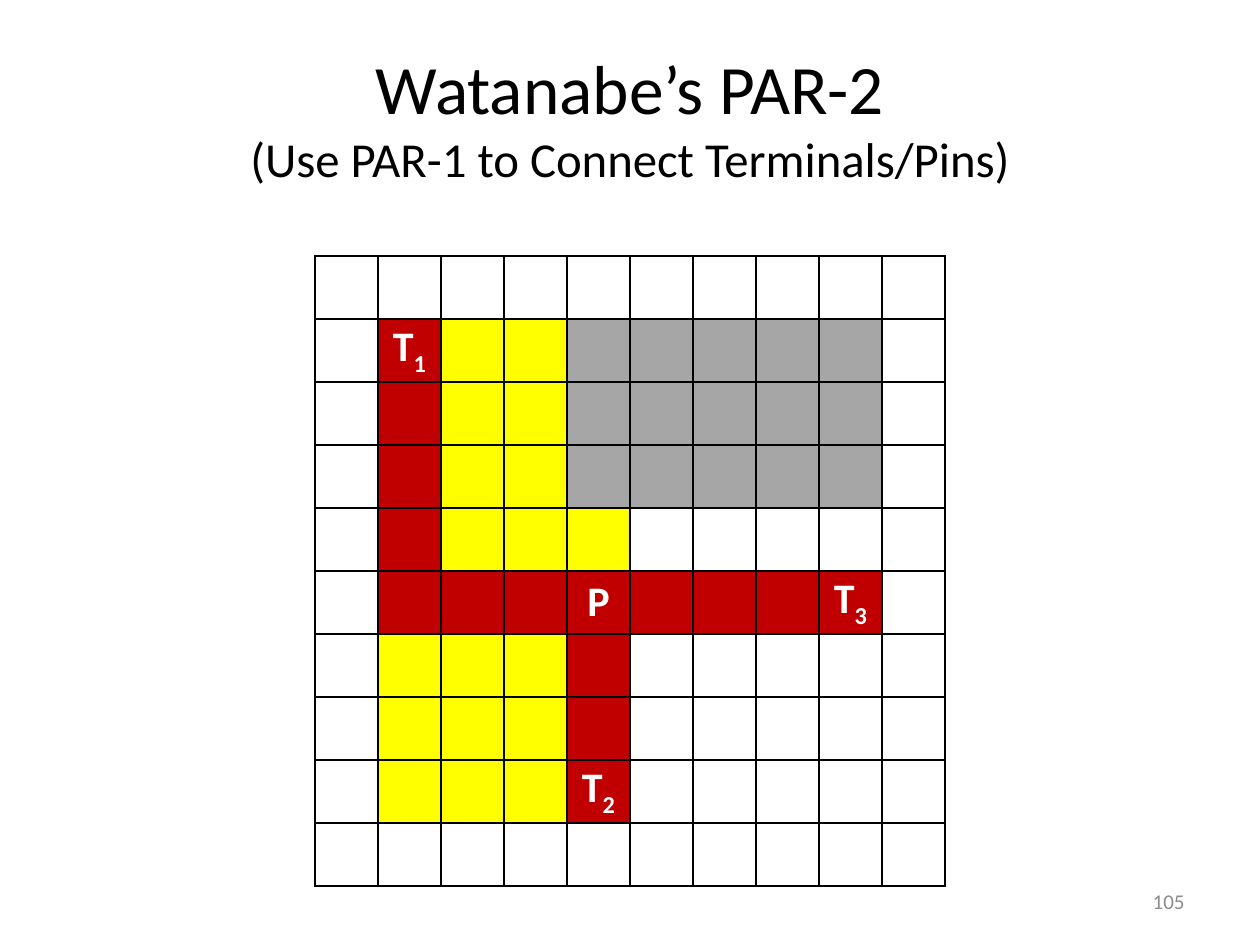
from lxml.etree import SubElement
from pptx import Presentation
from pptx.dml.color import RGBColor
from pptx.enum.text import MSO_ANCHOR as Anchor, PP_ALIGN as Align
from pptx.oxml.ns import qn
from pptx.util import Pt

BLACK = RGBColor(0x00, 0x00, 0x00)
WHITE = RGBColor(0xFF, 0xFF, 0xFF)
RED = RGBColor(0xC0, 0x00, 0x00)
YELLOW = RGBColor(0xFF, 0xFF, 0x00)
GRAY = RGBColor(0xA6, 0xA6, 0xA6)
NUMBER_GRAY = RGBColor(0x8C, 0x8C, 0x8C)
FONT = "Calibri"
CELL = 36

# Routing grid: R = path, Y = explored, G = blocked, . = free
GRID = [
    "..........",
    ".RYYGGGGG.",
    ".RYYGGGGG.",
    ".RYYGGGGG.",
    ".RYYY.....",
    ".RRRRRRRR.",
    ".YYYR.....",
    ".YYYR.....",
    ".YYYR.....",
    "..........",
]
FILLS = {"R": RED, "Y": YELLOW, "G": GRAY, ".": WHITE}

# (row, column): letter and subscript
LABELS = {(1, 1): ("T", "1"), (5, 4): ("P", ""), (5, 8): ("T", "3"), (8, 4): ("T", "2")}


def style_font(font, size, color, bold=False):
    font.name = FONT
    font.size = Pt(size)
    font.bold = bold
    font.color.rgb = color


def add_title(slide, heading, subheading):
    title = slide.shapes.title
    title.left, title.top, title.width, title.height = Pt(36), Pt(21.6), Pt(648), Pt(90)
    title.text_frame.vertical_anchor = Anchor.MIDDLE
    paragraph = title.text_frame.paragraphs[0]
    paragraph.alignment = Align.CENTER
    style_font(paragraph.font, 39.6, BLACK)
    first_line = paragraph.add_run()
    first_line.text = heading
    first_line.font.size = Pt(39.6)
    paragraph.add_line_break()
    second_line = paragraph.add_run()
    second_line.text = subheading
    second_line.font.size = Pt(27.9)


def add_borders(cell):
    properties = cell._tc.get_or_add_tcPr()
    for side in ("lnL", "lnR", "lnT", "lnB"):
        border = SubElement(properties, qn(f"a:{side}"), w=str(Pt(1.5)))
        fill = SubElement(border, qn("a:solidFill"))
        SubElement(fill, qn("a:srgbClr"), val=str(BLACK))


def label_cell(cell, letter, subscript):
    cell.vertical_anchor = Anchor.MIDDLE
    cell.margin_left = cell.margin_right = cell.margin_top = cell.margin_bottom = 0
    paragraph = cell.text_frame.paragraphs[0]
    paragraph.alignment = Align.CENTER
    style_font(paragraph.font, 24, WHITE, bold=True)
    paragraph.add_run().text = letter
    if subscript:
        index = paragraph.add_run()
        index.text = subscript
        index.font._element.set("baseline", "-25000")


def add_grid(slide, left, top):
    size = len(GRID)
    frame = slide.shapes.add_table(
        size, size, Pt(left), Pt(top), Pt(size * CELL), Pt(size * CELL))
    table = frame.table
    table.first_row = table.horz_banding = False
    for row, codes in enumerate(GRID):
        for column, code in enumerate(codes):
            cell = table.cell(row, column)
            add_borders(cell)
            cell.fill.solid()
            cell.fill.fore_color.rgb = FILLS[code]
            if (row, column) in LABELS:
                label_cell(cell, *LABELS[row, column])


def add_slide_number(slide, number):
    box = slide.shapes.add_textbox(Pt(516), Pt(500.5), Pt(168), Pt(28.75))
    box.text_frame.word_wrap = True
    box.text_frame.vertical_anchor = Anchor.MIDDLE
    paragraph = box.text_frame.paragraphs[0]
    paragraph.text = number
    paragraph.alignment = Align.RIGHT
    style_font(paragraph.font, 12, NUMBER_GRAY)


def main():
    presentation = Presentation()
    presentation.slide_width, presentation.slide_height = Pt(720), Pt(540)
    slide = presentation.slides.add_slide(presentation.slide_layouts[5])
    add_title(slide, "Watanabe’s PAR-2", "(Use PAR-1 to Connect Terminals/Pins)")
    add_grid(slide, 180, 146.25)
    add_slide_number(slide, "105")
    presentation.save("out.pptx")


if __name__ == "__main__":
    main()
